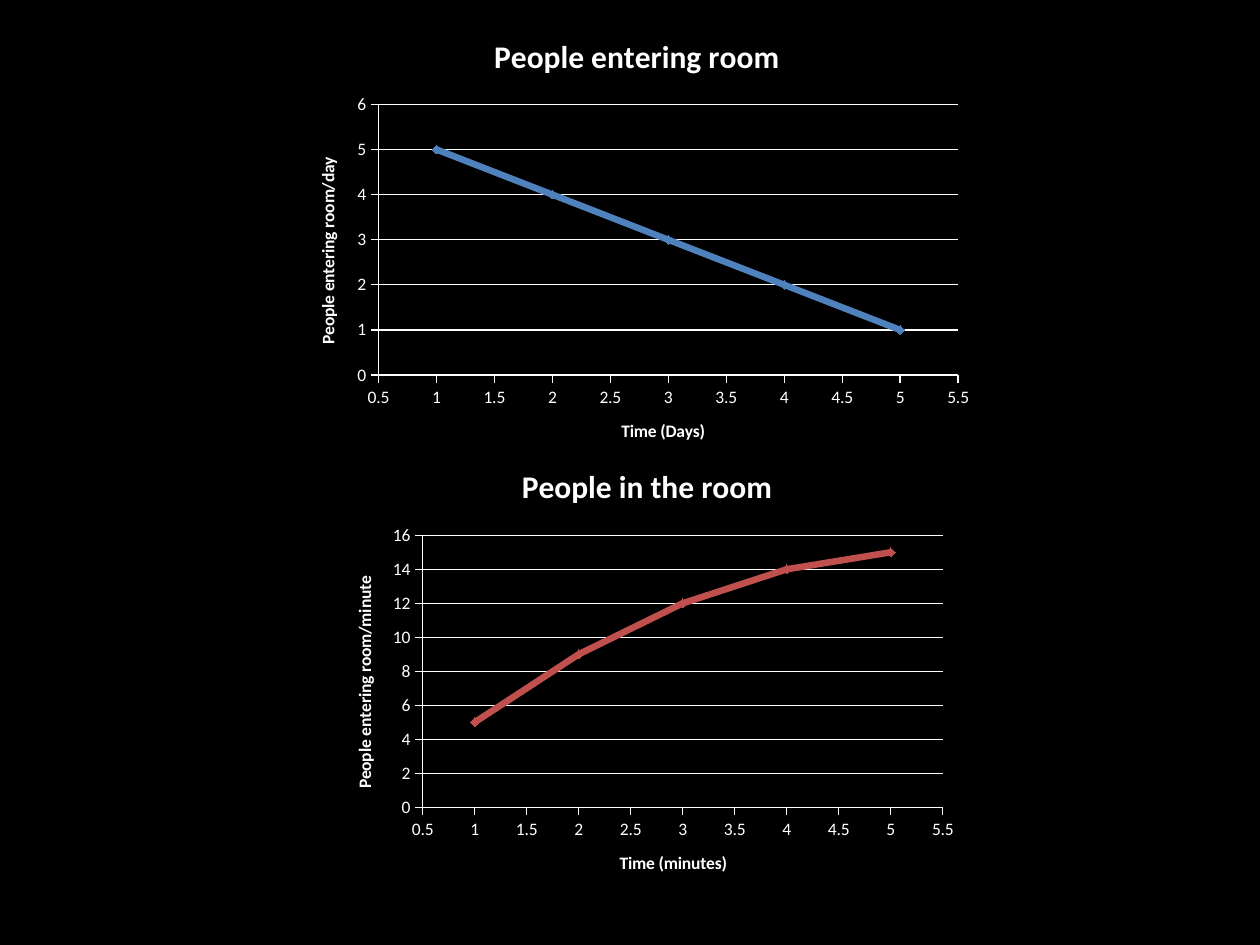
from dataclasses import dataclass

from pptx import Presentation
from pptx import util as u
from pptx.chart.data import XyChartData
from pptx.dml.color import RGBColor
from pptx.enum import chart as ch

WHITE = "FFFFFF"
FONT = "Calibri"
TIMES = range(1, 6)


@dataclass
class Graph:
    title: str
    time_title: str
    rate_title: str
    people: tuple[int, ...]
    color: str
    box: tuple[float, float, float, float]
    top_value: int
    step: int


GRAPHS = [
    Graph("People entering room", "Time (Days)", "People entering room/day",
          (5, 4, 3, 2, 1), "4F81BD", (2.31, 0.1, 5.49, 3.61), 6, 1),
    Graph("People in the room", "Time (minutes)", "People entering room/minute",
          (5, 9, 12, 14, 15), "C0504D", (2.6, 3.52, 5.07, 3.62), 16, 2),
]


def paint(color_format, color: str) -> None:
    color_format.rgb = RGBColor.from_string(color)


def style_font(font, size: float, bold: bool = False) -> None:
    font.name = FONT
    font.size = u.Pt(size)
    font.bold = bold
    paint(font.color, WHITE)


def style_line(line, color: str, width: float) -> None:
    line.width = u.Pt(width)
    line.fill.solid()
    paint(line.fill.fore_color, color)


def set_title(owner, title: str, size: float) -> None:
    """Give a chart or an axis a bold title."""
    owner.has_title = True
    frame = (owner.chart_title if hasattr(owner, "chart_title") else owner.axis_title).text_frame
    frame.text = title
    style_font(frame.paragraphs[0].runs[0].font, size, bold=True)


def style_axis(axis, title: str, low: float, high: float, step: float) -> None:
    set_title(axis, title, 10)
    axis.minimum_scale, axis.maximum_scale, axis.major_unit = low, high, step
    axis.major_tick_mark = ch.XL_TICK_MARK.OUTSIDE
    axis.minor_tick_mark = ch.XL_TICK_MARK.NONE
    axis.tick_label_position = ch.XL_TICK_LABEL_POSITION.NEXT_TO_AXIS
    axis.tick_labels.number_format = "General"
    axis.tick_labels.number_format_is_linked = False
    style_font(axis.tick_labels.font, 10)
    style_line(axis.format.line, WHITE, 0.75)


def draw_graph(slide, graph: Graph) -> None:
    points = XyChartData()
    people = points.add_series(graph.title)
    for time, count in zip(TIMES, graph.people):
        people.add_data_point(time, count)
    chart = slide.shapes.add_chart(ch.XL_CHART_TYPE.XY_SCATTER_SMOOTH,
                                   *map(u.Inches, graph.box), points).chart
    style_font(chart.font, 10)
    chart.has_legend = False
    set_title(chart, graph.title, 18)
    chart.chart_title.include_in_layout = False
    chart.plots[0].vary_by_categories = False

    style_axis(chart.category_axis, graph.time_title, 0.5, 5.5, 0.5)
    chart.category_axis.has_major_gridlines = False
    style_axis(chart.value_axis, graph.rate_title, 0, graph.top_value, graph.step)
    chart.value_axis.has_major_gridlines = True
    style_line(chart.value_axis.major_gridlines.format.line, WHITE, 0.75)

    curve = chart.plots[0].series[0]
    curve.smooth = True
    style_line(curve.format.line, graph.color, 3.75)
    curve.marker.style = ch.XL_MARKER_STYLE.DIAMOND
    curve.marker.size = 5
    curve.marker.format.fill.solid()
    paint(curve.marker.format.fill.fore_color, graph.color)
    style_line(curve.marker.format.line, graph.color, 0.75)


def main() -> None:
    deck = Presentation()
    deck.slide_width, deck.slide_height = u.Inches(10), u.Inches(7.5)
    slide = deck.slides.add_slide(deck.slide_layouts[6])
    slide.background.fill.solid()
    paint(slide.background.fill.fore_color, "000000")
    for graph in GRAPHS:
        draw_graph(slide, graph)
    deck.save("out.pptx")


if __name__ == "__main__":
    main()
